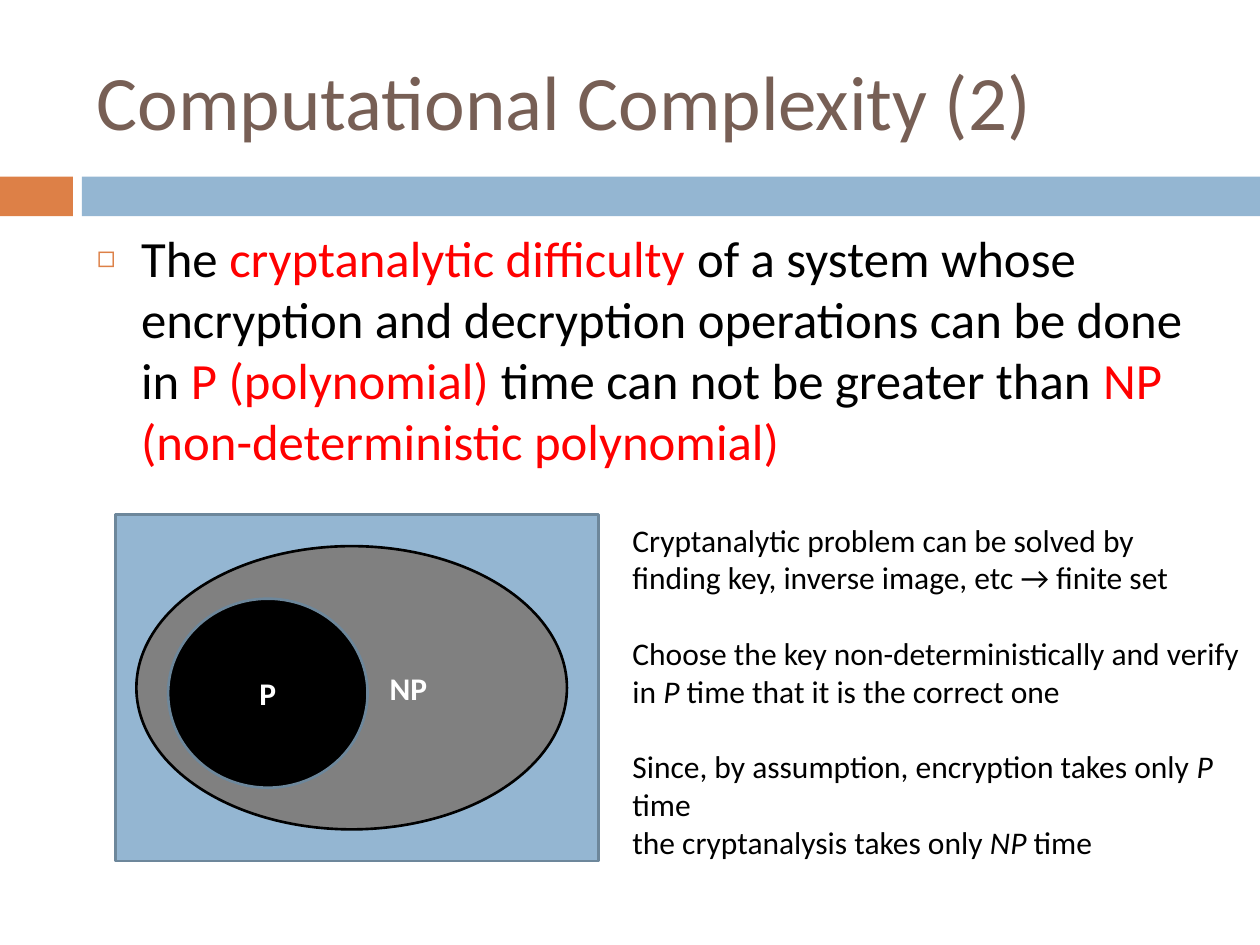
from lxml.etree import SubElement
from pptx import Presentation
from pptx.dml.color import RGBColor
from pptx.enum.shapes import MSO_SHAPE as Shape
from pptx.enum.text import MSO_ANCHOR as Anchor, MSO_AUTO_SIZE as AutoSize, PP_ALIGN as Align
from pptx.oxml.ns import qn
from pptx.util import Cm, Pt

BLACK = RGBColor(0x00, 0x00, 0x00)
WHITE = RGBColor(0xFF, 0xFF, 0xFF)
RED = RGBColor(0xFF, 0x00, 0x00)
GRAY = RGBColor(0x80, 0x80, 0x80)
BROWN = RGBColor(0x77, 0x5F, 0x55)
ORANGE = RGBColor(0xDD, 0x80, 0x47)
BLUE = RGBColor(0x94, 0xB6, 0xD2)
SLATE = RGBColor(0x6D, 0x87, 0x9B)

# Content: text runs carry only the format that differs
TITLE = [("Computational Complexity (2)", {})]
KEY = {"color": RED}
STATEMENT = [
    ("The ", {}),
    ("cryptanalytic difficulty ", KEY),
    ("of a system whose encryption and decryption operations can be done in ", {}),
    ("P (polynomial)", KEY),
    (" time can not be greater than ", {}),
    ("NP (non-deterministic polynomial)", KEY),
]
ITALIC = {"italic": True}
ARGUMENTS = [  # each argument is a list of lines
    [[("Cryptanalytic problem can be solved by", {})],
     [("finding key, inverse image, etc → finite set", {})]],
    [[("Choose the key non-deterministically and verify", {})],
     [("in ", {}), ("P ", ITALIC), ("time that it is the correct one", {})]],
    [[("Since, by assumption, encryption takes only ", {}), ("P", ITALIC), (" time", {})],
     [("the cryptanalysis takes only ", {}), ("NP", ITALIC), (" time", {})]],
]

# Places in cm: left, top, width, height
BANDS = [
    ((0, 3.56, 1.47, 0.8), ORANGE),
    ((1.65, 3.56, 23.75, 0.8), BLUE),
]
TITLE_PLACE = (1.7, 0.64, 22.66, 2.74)
STATEMENT_PLACE = (1.7, 4.45, 22.66, 12.5)
ARGUMENTS_PLACE = (12.5, 10.37, 13.16, 6.4)
SETS = [  # preset, place, fill, outline, label, left inset of the label
    (Shape.RECTANGLE, (2.33, 10.37, 9.74, 6.99), BLUE, SLATE, "", 0.25),
    (Shape.OVAL, (2.75, 11.01, 8.68, 5.71), GRAY, BLACK, "NP", 2.54),
    (Shape.OVAL, (3.39, 12.07, 4.02, 3.81), BLACK, SLATE, "P", 0.25),
]


def in_cm(place):
    return [Cm(length) for length in place]


def set_all(target, values):
    for name, value in values.items():
        setattr(target, name, value)


def write(paragraph, runs, size, color):
    for text, changes in runs:
        run = paragraph.add_run()
        run.text = text
        values = {"name": "Calibri", "size": Pt(size), "color": color} | changes
        run.font.color.rgb = values.pop("color")
        set_all(run.font, values)


def add_bullet(paragraph, char, color, percent, indent):
    properties = paragraph._p.get_or_add_pPr()
    properties.set("marL", str(indent))
    properties.set("indent", str(-indent))
    bullet_color = SubElement(properties, qn("a:buClr"))
    SubElement(bullet_color, qn("a:srgbClr"), val=str(color))
    SubElement(properties, qn("a:buSzPct"), val=str(percent * 1000))
    SubElement(properties, qn("a:buChar"), char=char)


def add_area(shapes, preset, place, fill, outline=None):
    area = shapes.add_shape(preset, *in_cm(place))
    area.shadow.inherit = False
    area.fill.solid()
    area.fill.fore_color.rgb = fill
    if outline is None:
        area.line.fill.background()
    else:
        area.line.color.rgb = outline
        area.line.width = Pt(1.5)
    return area


def move(placeholder, place):
    set_all(placeholder, dict(zip(("left", "top", "width", "height"), in_cm(place))))


deck = Presentation()
set_all(deck, {"slide_width": Cm(25.4), "slide_height": Cm(19.05)})
slide = deck.slides.add_slide(deck.slide_layouts[1])

# Bands under the title
for place, fill in BANDS:
    add_area(slide.shapes, Shape.RECTANGLE, place, fill)

# Title
title = slide.shapes.title
move(title, TITLE_PLACE)
set_all(title.text_frame, {"vertical_anchor": Anchor.MIDDLE, "auto_size": AutoSize.NONE})
heading = title.text_frame.paragraphs[0]
heading.alignment = Align.LEFT
write(heading, TITLE, 44, BROWN)

# Bulleted statement
body = slide.placeholders[1]
move(body, STATEMENT_PLACE)
body.text_frame.auto_size = AutoSize.NONE
statement = body.text_frame.paragraphs[0]
statement.space_before = Pt(7)
add_bullet(statement, "◻", ORANGE, 60, Cm(0.89))
write(statement, STATEMENT, 29, BLACK)

# Nested sets
diagram = slide.shapes.add_group_shape()
for preset, place, fill, outline, label, inset in SETS:
    area = add_area(diagram.shapes, preset, place, fill, outline)
    if label:
        set_all(area.text_frame, {"vertical_anchor": Anchor.MIDDLE, "margin_left": Cm(inset)})
        caption = area.text_frame.paragraphs[0]
        caption.alignment = Align.CENTER
        write(caption, [(label, {"bold": True})], 18, WHITE)

# Arguments beside the sets, one line apart
arguments = slide.shapes.add_textbox(*in_cm(ARGUMENTS_PLACE)).text_frame
arguments.word_wrap = True
for a, lines in enumerate(ARGUMENTS):
    for n, runs in enumerate(lines):
        first = a == 0 and n == 0
        line = arguments.paragraphs[0] if first else arguments.add_paragraph()
        if a and n == 0:
            line.space_before = Pt(21.6)
        write(line, runs, 18, BLACK)

deck.save("out.pptx")
